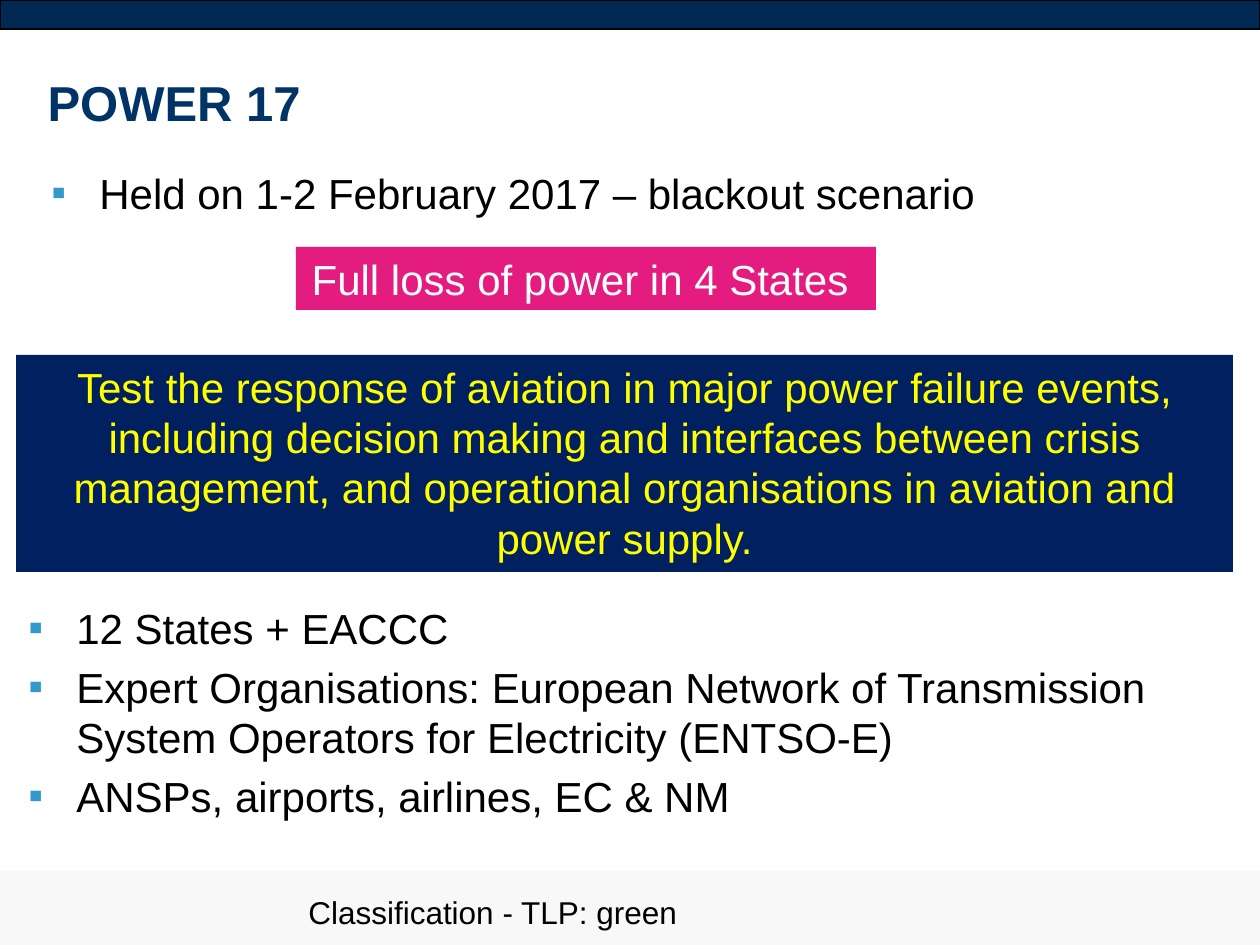
from lxml import etree
from pptx import Presentation, util as u
from pptx.dml.color import RGBColor
from pptx.enum import shapes, text
from pptx.oxml.ns import qn

FONT = "Arial"
TITLE = ("POWER 17", (35, 66, 970, 73))
BARS = [
    ((0, 0, 1260, 29), "002A54", "000000"),
    ((0, 871, 1260, 74), "F8F8F8", None),
]
LISTS = [
    ((39, 136, 1137, 113), ["Held on 1-2 February 2017 – blackout scenario"]),
    ((16, 612, 1234, 199), [
        "12 States + EACCC",
        "Expert Organisations: European Network of Transmission System "
        "Operators for Electricity (ENTSO-E)",
        "ANSPs, airports, airlines, EC & NM",
    ]),
]
FOOTER = ("Classification - TLP: green", (296, 887, 532, 39))
BANNERS = [
    ((296, 247, 580, 63), "E41C80", "FFFFFF", False,
     "Full loss of power in 4 States "),
    ((16, 355, 1217, 217), "002060", "FFFF00", True,
     "Test the response of aviation in major power failure events, including "
     "decision making and interfaces between crisis management, and "
     "operational organisations in aviation and power supply."),
]


def px(n):
    return u.Emu(round(n * 914400 / 126))


def rgb(color):
    return RGBColor.from_string(color)


def style(p, size, color, bold=False, align=text.PP_ALIGN.LEFT):
    p.alignment = align
    p.font.name, p.font.size, p.font.bold = FONT, u.Pt(size), bold
    p.font.color.rgb = rgb(color)


def add_rect(s, box, fill, line=None):
    sp = s.shapes.add_shape(shapes.MSO_SHAPE.RECTANGLE, *map(px, box))
    sp.shadow.inherit = False
    sp.fill.solid()
    sp.fill.fore_color.rgb = rgb(fill)
    if line:
        sp.line.color.rgb = rgb(line)
        sp.line.width = u.Pt(0.75)
    else:
        sp.line.fill.background()
    return sp


def add_text(s, box, lines, size, color, anchor):
    tf = s.shapes.add_textbox(*map(px, box)).text_frame
    tf.word_wrap = True
    tf.vertical_anchor = anchor
    tf.text = "\n".join(lines)
    for p in tf.paragraphs:
        style(p, size, color)
    return tf


def add_bullet(p):
    pPr = p._p.get_or_add_pPr()
    pPr.set("marL", str(px(48)))
    pPr.set("indent", str(-px(48)))
    clr = etree.Element(qn("a:buClr"))
    etree.SubElement(clr, qn("a:srgbClr"), val="3399CC")
    font = etree.Element(qn("a:buFont"), typeface=FONT)
    char = etree.Element(qn("a:buChar"), char="▪")
    at = len(pPr.findall(qn("a:spcBef")))
    for i, el in enumerate((clr, font, char)):
        pPr.insert(at + i, el)


def main():
    prs = Presentation()
    prs.slide_width, prs.slide_height = px(1260), px(945)
    s = prs.slides.add_slide(prs.slide_layouts[5])

    for bar in BARS:
        add_rect(s, *bar)

    title = s.shapes.title
    title.left, title.top, title.width, title.height = map(px, TITLE[1])
    tf = title.text_frame
    tf.text = TITLE[0]
    tf.vertical_anchor = text.MSO_ANCHOR.TOP
    style(tf.paragraphs[0], 28, "003366", bold=True)

    for box, lines in LISTS:
        tf = add_text(s, box, lines, 24, "000000", text.MSO_ANCHOR.MIDDLE)
        for i, p in enumerate(tf.paragraphs):
            if i:
                p.space_before = u.Pt(4.8)
            add_bullet(p)

    add_text(s, FOOTER[1], [FOOTER[0]], 18, "000000", text.MSO_ANCHOR.TOP)

    for box, fill, color, wrap, words in BANNERS:
        tf = add_rect(s, box, fill).text_frame
        tf.word_wrap = wrap
        tf.auto_size = text.MSO_AUTO_SIZE.SHAPE_TO_FIT_TEXT
        tf.vertical_anchor = text.MSO_ANCHOR.TOP
        tf.text = words
        style(tf.paragraphs[0], 24, color, align=text.PP_ALIGN.CENTER)

    prs.save("out.pptx")


if __name__ == "__main__":
    main()
